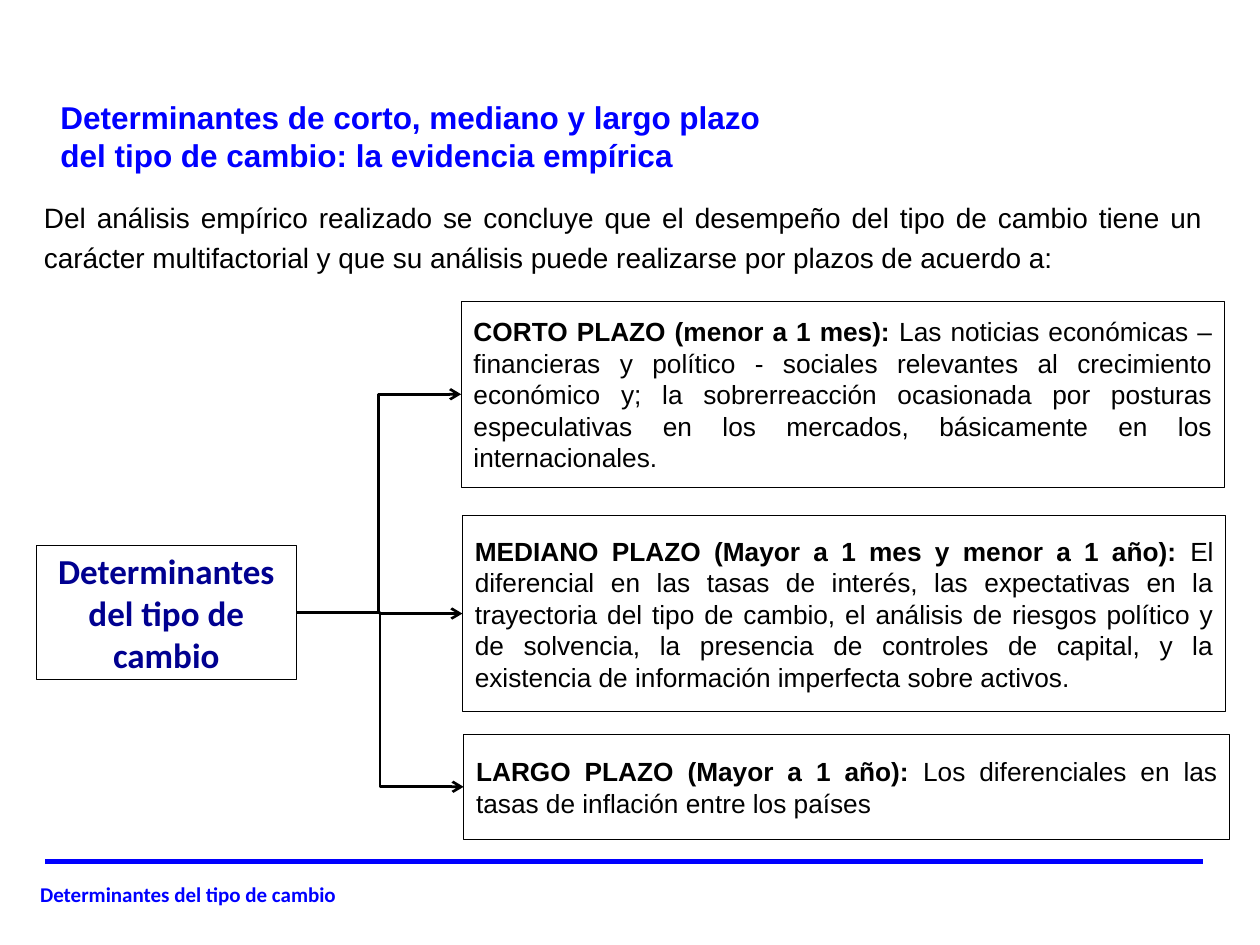
from lxml.etree import SubElement
from pptx import Presentation
from pptx.dml.color import RGBColor
from pptx.enum.shapes import MSO_CONNECTOR, MSO_SHAPE
from pptx.enum.text import MSO_ANCHOR, MSO_AUTO_SIZE, PP_ALIGN
from pptx.oxml.ns import qn
from pptx.util import Inches, Pt

BLUE = RGBColor(0x00, 0x00, 0xFF)
NAVY = RGBColor(0x00, 0x00, 0x90)
BLACK = RGBColor(0x00, 0x00, 0x00)
WHITE = RGBColor(0xFF, 0xFF, 0xFF)

TITLE = "Determinantes de corto, mediano y largo plazo del tipo de cambio: la evidencia empírica"
INTRODUCTION = (
    "Del análisis empírico realizado se concluye que el desempeño del tipo de cambio tiene un "
    "carácter multifactorial y que su análisis puede realizarse por plazos de acuerdo a:"
)
TOPIC = "Determinantes del tipo de cambio"
TERMS = [
    ((3.66, 2.39, 6.06, 1.48), "CORTO PLAZO (menor a 1 mes): ",
     "Las noticias económicas – financieras y político - sociales relevantes al crecimiento "
     "económico y; la sobrerreacción ocasionada por posturas especulativas en los mercados, "
     "básicamente en los internacionales."),
    ((3.67, 4.09, 6.06, 1.56), "MEDIANO PLAZO (Mayor a 1 mes y menor a 1 año): ",
     "El diferencial en las tasas de interés, las expectativas en la trayectoria del tipo de "
     "cambio, el análisis de riesgos político y de solvencia, la presencia de controles de "
     "capital, y la existencia de información imperfecta sobre activos."),
    ((3.68, 5.83, 6.08, 0.83), "LARGO PLAZO (Mayor a 1 año): ",
     "Los diferenciales en las tasas de inflación entre los países"),
]
RIGHT_SITE, LEFT_SITE = 3, 1


def write(shape, texts, size, color, font="Arial", align=PP_ALIGN.LEFT, anchor=MSO_ANCHOR.TOP):
    """Fill a shape with one paragraph made of (text, bold) runs."""
    frame = shape.text_frame
    frame.word_wrap = True
    frame.auto_size = MSO_AUTO_SIZE.NONE
    frame.vertical_anchor = anchor
    paragraph = frame.paragraphs[0]
    paragraph.alignment = align
    for text, bold in texts:
        run = paragraph.add_run()
        run.text = text
        run.font.name = font
        run.font.size = Pt(size)
        run.font.bold = bold
        run.font.color.rgb = color
    return paragraph


def add_box(slide, position):
    """Add a white rectangle with a thin black outline."""
    box = slide.shapes.add_shape(MSO_SHAPE.RECTANGLE, *map(Inches, position))
    box.shadow.inherit = False
    box.fill.solid()
    box.fill.fore_color.rgb = WHITE
    box.line.color.rgb = BLACK
    box.line.width = Pt(0.5)
    return box


def add_line(slide, kind, start, end, color, width):
    """Add a connector without shadow."""
    line = slide.shapes.add_connector(kind, *map(Inches, start + end))
    line.line.color.rgb = color
    line.line.width = Pt(width)
    SubElement(line._element.spPr, qn("a:effectLst"))
    return line


def add_arrow(slide, source, target):
    """Join two boxes, right side to left side, with an elbow arrow."""
    arrow = add_line(slide, MSO_CONNECTOR.ELBOW, (0, 0), (1, 1), BLACK, 1.5)
    arrow.begin_connect(source, RIGHT_SITE)
    arrow.end_connect(target, LEFT_SITE)
    SubElement(arrow.line._get_or_add_ln(), qn("a:tailEnd"), type="arrow")


def main():
    """Build the slide on exchange rate determinants."""
    presentation = Presentation()
    presentation.slide_width, presentation.slide_height = Inches(10), Inches(7.5)
    slide = presentation.slides.add_slide(presentation.slide_layouts[5])

    title = slide.shapes.title
    title.left, title.top, title.width, title.height = map(Inches, (0.38, 0.73, 5.83, 0.71))
    write(title, [(TITLE, True)], 18, BLUE)

    introduction = slide.shapes.add_textbox(*map(Inches, (0.25, 1.49, 9.39, 0.74)))
    paragraph = write(introduction, [(INTRODUCTION, False)], 16, BLACK, align=PP_ALIGN.JUSTIFY)
    paragraph.line_spacing = 1.2

    topic = add_box(slide, (0.29, 4.33, 2.06, 1.06))
    write(topic, [(TOPIC, True)], 20, NAVY, "Calibri", PP_ALIGN.CENTER, MSO_ANCHOR.MIDDLE)

    for position, term, factors in TERMS:
        box = add_box(slide, position)
        write(box, [(term, True), (factors, False)], 15, BLACK,
              align=PP_ALIGN.JUSTIFY, anchor=MSO_ANCHOR.MIDDLE)
        add_arrow(slide, topic, box)

    add_line(slide, MSO_CONNECTOR.STRAIGHT, (0.36, 6.84), (9.55, 6.84), BLUE, 3)
    footer = slide.shapes.add_textbox(*map(Inches, (0.22, 6.95, 7.14, 0.3)))
    write(footer, [(TOPIC, True)], 12, BLUE, "Calibri")

    presentation.save("out.pptx")


if __name__ == "__main__":
    main()
